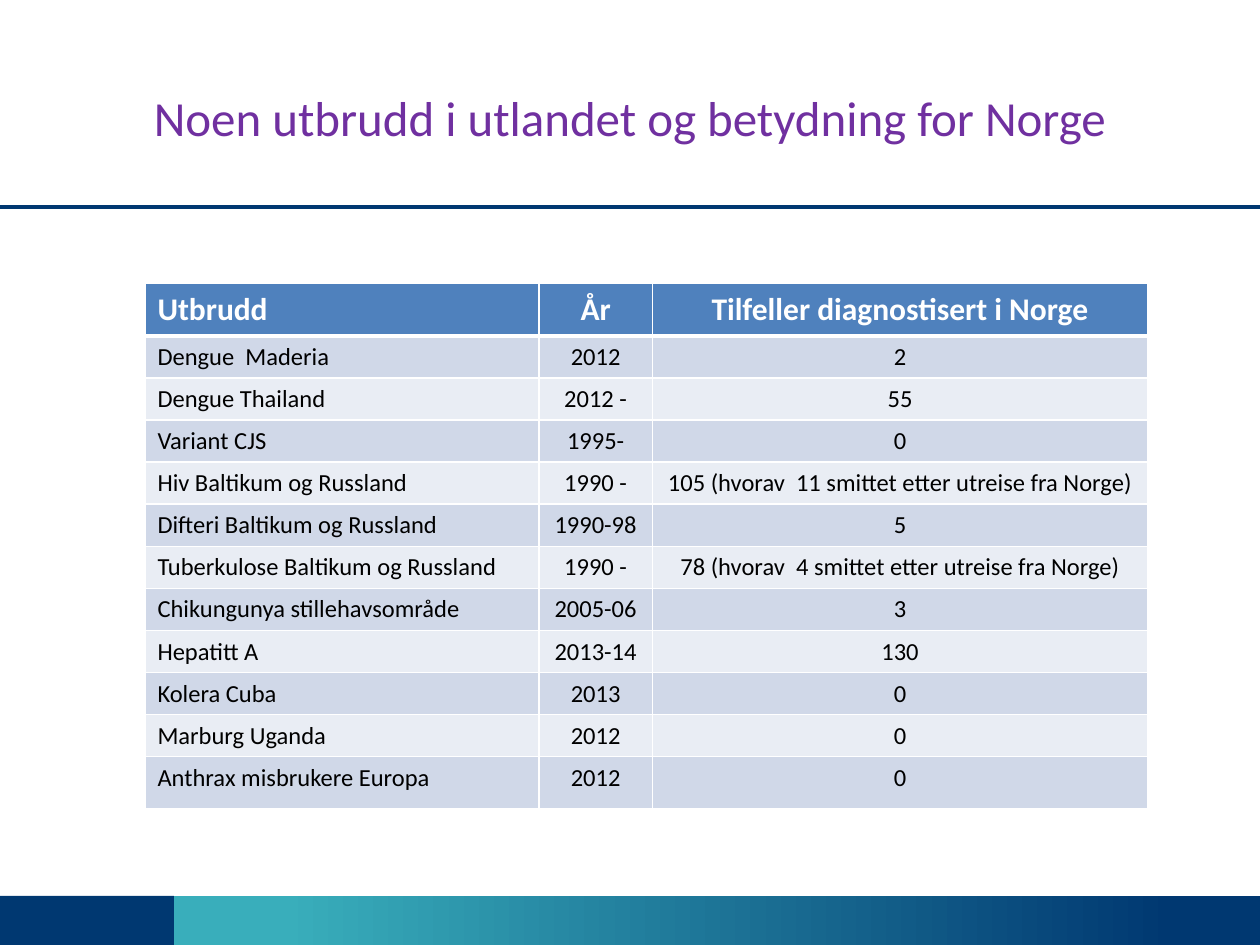
import pptx
import pptx.util
import pptx.dml.color
import pptx.enum.shapes
import pptx.enum.text
import pptx.oxml
import pptx.oxml.ns

RGBColor = pptx.dml.color.RGBColor
WHITE = RGBColor(0xFF, 0xFF, 0xFF)
BLACK = RGBColor(0x00, 0x00, 0x00)
NAVY = RGBColor(0x00, 0x38, 0x71)
TEAL = RGBColor(0x39, 0xAE, 0xBB)
PURPLE = RGBColor(0x70, 0x30, 0xA0)
HEADER = RGBColor(0x4F, 0x81, 0xBD)
BANDS = (RGBColor(0xE9, 0xED, 0xF4), RGBColor(0xD0, 0xD8, 0xE8))
FONT = "Calibri"
ALIGN = pptx.enum.text.PP_ALIGN
ANCHOR = pptx.enum.text.MSO_ANCHOR

ROWS = [
    ("Utbrudd", "År", "Tilfeller diagnostisert i Norge"),
    ("Dengue  Maderia", "2012", "2"),
    ("Dengue Thailand", "2012 -", "55"),
    ("Variant CJS", "1995-", "0"),
    ("Hiv Baltikum og Russland", "1990 -", "105 (hvorav  11 smittet etter utreise fra Norge)"),
    ("Difteri Baltikum og Russland", "1990-98", "5"),
    ("Tuberkulose Baltikum og Russland", "1990 -", "78 (hvorav  4 smittet etter utreise fra Norge)"),
    ("Chikungunya stillehavsområde", "2005-06", "3"),
    ("Hepatitt A", "2013-14", "130"),
    ("Kolera Cuba", "2013", "0"),
    ("Marburg Uganda", "2012", "0"),
    ("Anthrax misbrukere Europa", "2012", "0"),
]


def style_runs(p, size, color, bold=False):
    """Apply one text style to every run of a paragraph."""
    for r in p.runs:
        r.font.name, r.font.size = FONT, pptx.util.Pt(size)
        r.font.color.rgb, r.font.bold = color, bold


def add_band(s, x, y, w, h):
    """Draw the footer band: a navy block, then a teal to navy gradient."""
    split = int(w * 0.138)
    for left, width in ((x, split), (x + split, w - split)):
        sp = s.shapes.add_shape(pptx.enum.shapes.MSO_SHAPE.RECTANGLE, left, y, width, h)
        sp.shadow.inherit = False
        sp.line.fill.background()
        if left == x:
            sp.fill.solid()
            sp.fill.fore_color.rgb = NAVY
        else:
            sp.fill.gradient()
            sp.fill.gradient_angle = 0
            for stop, color, pos in zip(sp.fill.gradient_stops, (TEAL, NAVY), (0.1, 0.92)):
                stop.color.rgb, stop.position = color, pos


def add_rule(s, x, y, w):
    """Draw the horizontal rule under the title."""
    line = s.shapes.add_connector(pptx.enum.shapes.MSO_CONNECTOR.STRAIGHT, x, y, x + w, y)
    line.line.color.rgb = NAVY
    line.line.width = pptx.util.Pt(2)
    effects = pptx.oxml.parse_xml("<a:effectLst %s/>" % pptx.oxml.ns.nsdecls("a"))
    line._element.spPr.append(effects)


def add_title(s, x, y, w, h):
    """Place the centred title in its box."""
    tf = s.shapes.add_textbox(x, y, w, h).text_frame
    tf.word_wrap = True
    tf.vertical_anchor = ANCHOR.MIDDLE
    tf.text = "Noen utbrudd i utlandet og betydning for Norge"
    tf.paragraphs[0].alignment = ALIGN.CENTER
    style_runs(tf.paragraphs[0], 28, PURPLE)


def set_borders(cell, bottom):
    """Give a cell white borders with its own bottom weight."""
    tc_pr = cell._tc.get_or_add_tcPr()
    for i, (side, pt) in enumerate((("L", 1), ("R", 1), ("T", 1), ("B", bottom))):
        tc_pr.insert(i, pptx.oxml.parse_xml(
            '<a:ln%s %s w="%d"><a:solidFill><a:srgbClr val="%s"/></a:solidFill></a:ln%s>'
            % (side, pptx.oxml.ns.nsdecls("a"), pptx.util.Pt(pt), WHITE, side)))


def add_outbreaks(s, x, y, w, h):
    """Place the outbreak table, with taller first and last rows."""
    table = s.shapes.add_table(len(ROWS), len(ROWS[0]), x, y, w, h).table
    for column, share in zip(table.columns, (0.393, 0.113, 0.494)):
        column.width = int(w * share)
    last = len(ROWS) - 1
    for i, values in enumerate(ROWS):
        header = i == 0
        table.rows[i].height = int(h * (0.1 if i in (0, last) else 0.8 / (last - 1)))
        for j, value in enumerate(values):
            cell = table.cell(i, j)
            cell.text = value
            cell.vertical_anchor = ANCHOR.MIDDLE if header else ANCHOR.TOP
            p = cell.text_frame.paragraphs[0]
            p.alignment = ALIGN.CENTER if j else ALIGN.LEFT
            style_runs(p, 18 if header else 14, WHITE if header else BLACK, header)
            cell.fill.solid()
            cell.fill.fore_color.rgb = HEADER if header else BANDS[i % 2]
            set_borders(cell, 3 if header else 1)


def main():
    """Build and save the slide."""
    prs = pptx.Presentation()
    prs.slide_width, prs.slide_height = pptx.util.Inches(10), pptx.util.Inches(7.5)
    w, h = prs.slide_width, prs.slide_height
    s = prs.slides.add_slide(prs.slide_layouts[6])
    band_top = int(h * 0.948)
    add_band(s, 0, band_top, w, h - band_top)
    add_rule(s, 0, int(h * 0.219), w)
    add_title(s, int(w * 0.05), int(h * 0.04), int(w * 0.9), int(h / 6))
    add_outbreaks(s, int(w * 0.115), int(h * 0.3), int(w * 0.796), int(h * 0.555))
    prs.save("out.pptx")


if __name__ == "__main__":
    main()
